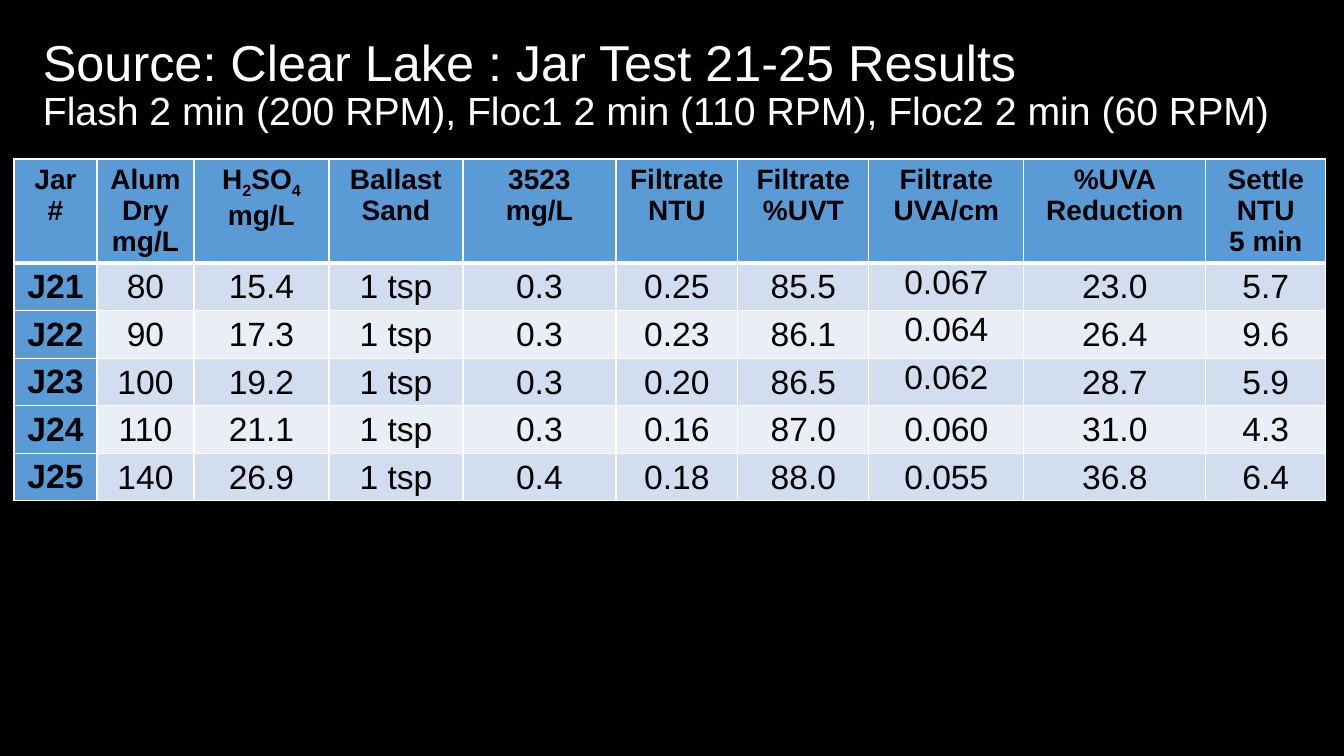
from lxml.etree import SubElement
from pptx import Presentation
from pptx.dml.color import RGBColor
from pptx.enum.text import MSO_ANCHOR, PP_ALIGN
from pptx.oxml.ns import qn
from pptx.util import Emu, Pt

FONT = "Arial"
BLACK, WHITE, BLUE = "000000", "FFFFFF", "5B9BD5"
BANDS = ("D2DEEF", "EAEFF7")
COLUMN_WIDTHS = (83, 97, 135, 134, 153, 122, 131, 155, 182, 120)
HEADER_HEIGHT, JAR_HEIGHT = 104, 47
UVA_COLUMN = 7
TOP_ANCHORED_JARS = ("J21", "J22", "J23")
HEADINGS = (
    "Jar #", "Alum\nDry\nmg/L", "H_2_SO_4\nmg/L", "Ballast\nSand", "3523\nmg/L",
    "Filtrate\nNTU", "Filtrate\n%UVT", "Filtrate\nUVA/cm", "%UVA\nReduction",
    "Settle\nNTU\n5 min",
)
JARS = (
    ("J21", "80", "15.4", "1 tsp", "0.3", "0.25", "85.5", "0.067", "23.0", "5.7"),
    ("J22", "90", "17.3", "1 tsp", "0.3", "0.23", "86.1", "0.064", "26.4", "9.6"),
    ("J23", "100", "19.2", "1 tsp", "0.3", "0.20", "86.5", "0.062", "28.7", "5.9"),
    ("J24", "110", "21.1", "1 tsp", "0.3", "0.16", "87.0", "0.060", "31.0", "4.3"),
    ("J25", "140", "26.9", "1 tsp", "0.4", "0.18", "88.0", "0.055", "36.8", "6.4"),
)


def px(count):
    """Turn slide pixels into EMU."""
    return Emu(round(count * 12192000 / 1344))


def rgb(code):
    """Turn a hex string into a colour."""
    return RGBColor.from_string(code)


def set_font(font, size, color, bold=False):
    """Apply the slide typeface with a size, colour and weight."""
    font.name, font.size, font.bold = FONT, Pt(size), bold
    font.color.rgb = rgb(color)


def add_title(slide, heading, subheading):
    """Add the two-line title."""
    title = slide.shapes.add_textbox(px(33), px(13), px(1257), px(146)).text_frame
    title.word_wrap = True
    title.vertical_anchor = MSO_ANCHOR.MIDDLE
    paragraph = title.paragraphs[0]
    paragraph.line_spacing = 0.9
    upper = paragraph.add_run()
    upper.text = heading
    set_font(upper.font, 36, WHITE)
    paragraph.add_line_break()
    lower = paragraph.add_run()
    lower.text = subheading
    set_font(lower.font, 28, WHITE)


def set_borders(cell, top, bottom):
    """Draw white cell borders, with the top and bottom widths in points."""
    properties = cell._tc.get_or_add_tcPr()
    for side, width in (("L", 1), ("R", 1), ("T", top), ("B", bottom)):
        line = SubElement(properties, qn(f"a:ln{side}"), w=str(Pt(width)))
        fill = SubElement(line, qn("a:solidFill"))
        SubElement(fill, qn("a:srgbClr"), val=WHITE)


def fill_cell(cell, text, size, bold, background):
    """Fill a cell with centred text, where underscores enclose subscripts."""
    cell.fill.solid()
    cell.fill.fore_color.rgb = rgb(background)
    frame = cell.text_frame
    for index, line in enumerate(text.split("\n")):
        paragraph = frame.add_paragraph() if index else frame.paragraphs[0]
        paragraph.alignment = PP_ALIGN.CENTER
        set_font(paragraph.font, size, BLACK, bold)
        for position, part in enumerate(line.split("_")):
            if part:
                run = paragraph.add_run()
                run.text = part
                if position % 2:
                    run._r.get_or_add_rPr().set("baseline", "-25000")


def tighten(cell, anchor):
    """Give a result cell narrow margins and a vertical anchor."""
    cell.margin_left = cell.margin_right = cell.margin_top = px(1)
    cell.margin_bottom = 0
    cell.vertical_anchor = anchor


def add_results(slide):
    """Add the jar test table."""
    results = slide.shapes.add_table(
        len(JARS) + 1, len(HEADINGS), px(14), px(159), px(sum(COLUMN_WIDTHS)),
        px(HEADER_HEIGHT + JAR_HEIGHT * len(JARS)),
    ).table
    results.first_row = results.horz_banding = False
    for column, width in zip(results.columns, COLUMN_WIDTHS):
        column.width = px(width)
    for index, row in enumerate(results.rows):
        row.height = px(JAR_HEIGHT if index else HEADER_HEIGHT)
    for index, heading in enumerate(HEADINGS):
        cell = results.cell(0, index)
        set_borders(cell, 1, 3)
        fill_cell(cell, heading, 20, True, BLUE)
    for row, jar in enumerate(JARS, 1):
        for index, value in enumerate(jar):
            cell = results.cell(row, index)
            is_label = index == 0
            set_borders(cell, 3 if row == 1 else 1, 1)
            fill_cell(cell, value, 24, is_label, BLUE if is_label else BANDS[(row - 1) % 2])
            if not is_label:
                at_top = index == UVA_COLUMN and jar[0] in TOP_ANCHORED_JARS
                tighten(cell, MSO_ANCHOR.TOP if at_top else MSO_ANCHOR.MIDDLE)


def main():
    """Build and save the slide."""
    deck = Presentation()
    deck.slide_width, deck.slide_height = px(1344), px(756)
    slide = deck.slides.add_slide(deck.slide_layouts[6])
    slide.background.fill.solid()
    slide.background.fill.fore_color.rgb = rgb(BLACK)
    add_results(slide)
    add_title(
        slide,
        "Source: Clear Lake : Jar Test 21-25 Results",
        "Flash 2 min (200 RPM), Floc1 2 min (110 RPM), Floc2 2 min (60 RPM)",
    )
    deck.save("out.pptx")


if __name__ == "__main__":
    main()
